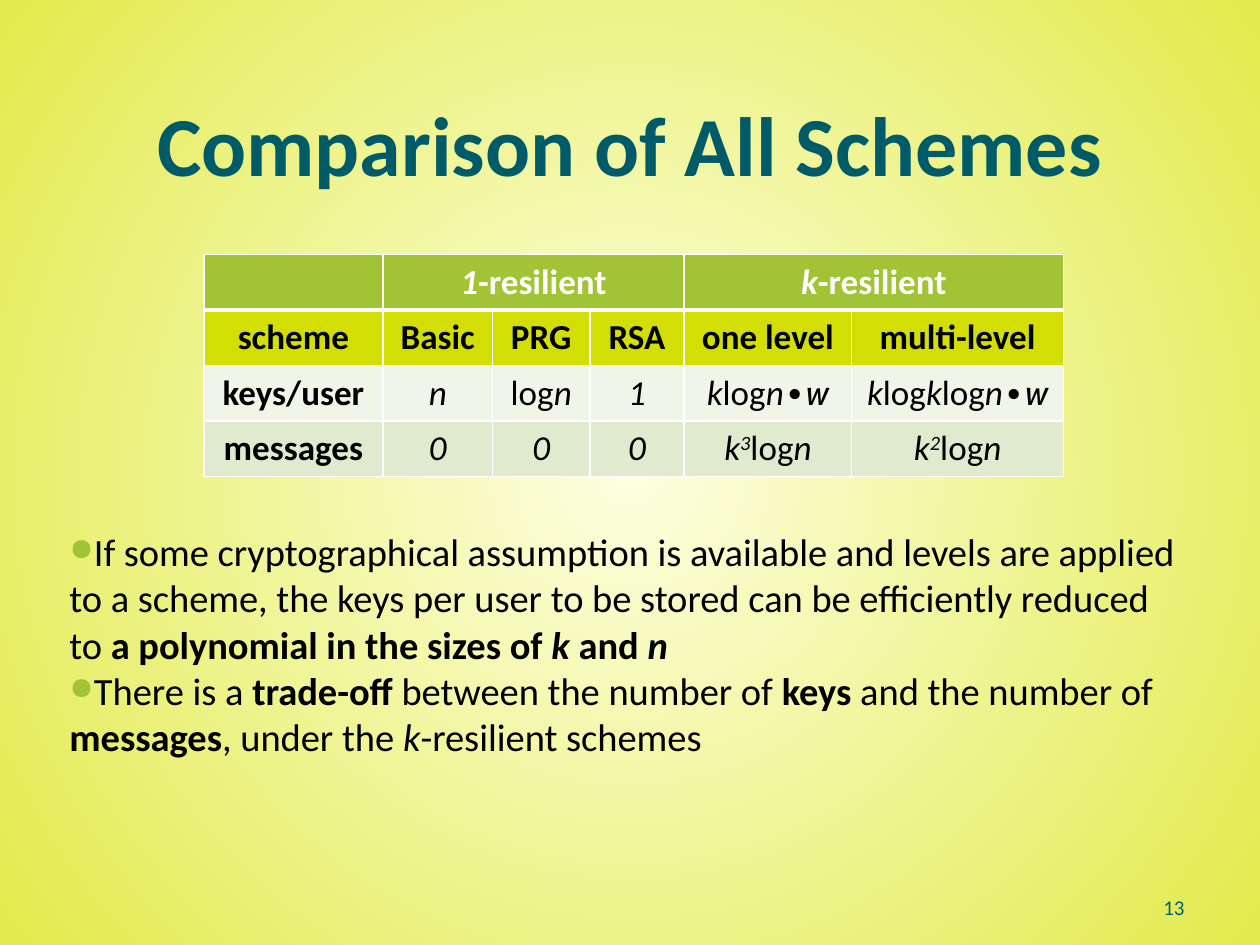
from lxml import etree
from pptx import Presentation
from pptx.dml.color import RGBColor
from pptx.enum.text import MSO_ANCHOR, PP_ALIGN
from pptx.oxml.ns import qn
from pptx.util import Cm, Pt

TOP, BOTTOM = MSO_ANCHOR.TOP, MSO_ANCHOR.BOTTOM
LEFT, CENTER, RIGHT = PP_ALIGN.LEFT, PP_ALIGN.CENTER, PP_ALIGN.RIGHT

COLORS = {
    "center": "FDFFE0", "edge": "E2EA4B", "title": "005B68", "number": "006270",
    "green": "A0C435", "lime": "D2DE04", "pale": "F0F5E8", "band": "DFEACE",
    "white": "FFFFFF", "black": "000000",
}


def rgb(name):
    return RGBColor.from_string(COLORS[name])


def write(p, runs, size=20, color="black", align=LEFT, bold=False):
    """Add (text, style) runs; style letters: b bold, i italic, s superscript, c Cabin."""
    p.alignment = align
    for text, style in runs:
        r = p.add_run()
        r.text = text
        r.font.name = "Cabin" if "c" in style else "Calibri"
        r.font.size = Pt(size)
        r.font.color.rgb = rgb(color)
        r.font.bold = bold or "b" in style
        r.font.italic = "i" in style
        if "s" in style:
            r.font._element.set("baseline", "30000")


prs = Presentation()
prs.slide_width, prs.slide_height = Cm(25.4), Cm(19.05)
s = prs.slides.add_slide(prs.slide_layouts[6])

# Radial background
fill = s.background.fill
fill.gradient()
for stop, name in zip(fill.gradient_stops, ("center", "edge")):
    stop.color.rgb = rgb(name)
grad = s.element.find(".//" + qn("a:gradFill"))
grad.remove(grad.find(qn("a:lin")))
radial = etree.SubElement(grad, qn("a:path"), path="circle")
etree.SubElement(radial, qn("a:fillToRect"), l="50000", t="50000", r="50000", b="50000")

# Title, slide number and body text
title = [[("Comparison of All Schemes", "b")]]
number = [[("13", "")]]
body = [
    [("If some cryptographical assumption is available and levels are applied to a scheme, "
      "the keys per user to be stored can be efficiently reduced to ", ""),
     ("a polynomial in the sizes of ", "b"), ("k", "bi"), (" and ", "b"), ("n", "bi")],
    [("There is a ", ""), ("trade-off", "b"), (" between the number of ", ""), ("keys", "b"),
     (" and the number of ", ""), ("messages", "b"), (", under the ", ""), ("k", "i"),
     ("-resilient schemes", "")],
]
boxes = [
    (title, (1.27, 0.84, 22.86, 3.18), BOTTOM, dict(size=48, color="title", align=CENTER)),
    (number, (18.21, 17.35, 5.92, 1.32), BOTTOM, dict(size=12, color="number", align=RIGHT)),
    (body, (1.27, 10.52, 22.86, 6.5), TOP, dict(size=22)),
]
for paragraphs, place, anchor, style in boxes:
    tf = s.shapes.add_textbox(*map(Cm, place)).text_frame
    tf.word_wrap = True
    tf.vertical_anchor = anchor
    for i, runs in enumerate(paragraphs):
        p = tf.add_paragraph() if i else tf.paragraphs[0]
        write(p, runs, **style)

# The last box is the body: narrow its margins and add bullets
tf.margin_left = tf.margin_right = tf.margin_top = tf.margin_bottom = Cm(0.13)
for p in tf.paragraphs:
    pPr = p._p.get_or_add_pPr()
    pPr.set("marL", "0")
    pPr.set("indent", str(-Cm(0.76)))
    bullet_color = etree.SubElement(pPr, qn("a:buClr"))
    etree.SubElement(bullet_color, qn("a:srgbClr"), val=COLORS["green"])
    etree.SubElement(pPr, qn("a:buSzPct"), val="80000")
    etree.SubElement(pPr, qn("a:buChar"), char="●")

# Comparison table
K, N, LOG, W = ("k", "i"), ("n", "i"), ("log", ""), ("∙w", "ic")
ZERO = [("0", "i")]
names = ("scheme", "Basic", "PRG", "RSA", "one level", "multi-level")
rows = [
    [[], [("1", "i"), ("-resilient", "")], [], [], [K, ("-resilient", "")], []],
    [[(name, "")] for name in names],
    [[("keys/user", "b")], [N], [LOG, N], [("1", "i")], [K, LOG, N, W],
     [K, LOG, K, LOG, N, W]],
    [[("messages", "b")], ZERO, ZERO, ZERO, [K, ("3", "is"), LOG, N],
     [K, ("2", "is"), LOG, N]],
]
row_fills = ("green", "lime", "pale", "band")
col_widths = (3.61, 2.21, 1.96, 1.9, 3.38, 4.27)
row_height = 1.12

table = s.shapes.add_table(len(rows), len(col_widths), Cm(4.11), Cm(5.13),
                           Cm(sum(col_widths)), Cm(row_height * len(rows))).table
for col, width in zip(table.columns, col_widths):
    col.width = Cm(width)
for i, (row, row_fill) in enumerate(zip(rows, row_fills)):
    table.rows[i].height = Cm(row_height)
    for j, runs in enumerate(row):
        cell = table.cell(i, j)
        write(cell.text_frame.paragraphs[0], runs, align=CENTER, bold=i < 2,
              color="black" if i else "white")
        tcPr = cell._tc.get_or_add_tcPr()
        for side in ("lnL", "lnR", "lnT", "lnB"):
            thick = (i, side) in ((0, "lnB"), (1, "lnT"))
            ln = etree.SubElement(tcPr, qn("a:" + side), w=str(Pt(3 if thick else 1)))
            solid = etree.SubElement(ln, qn("a:solidFill"))
            etree.SubElement(solid, qn("a:srgbClr"), val=COLORS["white"])
        cell.fill.solid()
        cell.fill.fore_color.rgb = rgb(row_fill)
for first, last in ((1, 3), (4, 5)):
    table.cell(0, first).merge(table.cell(0, last))

prs.save("out.pptx")
